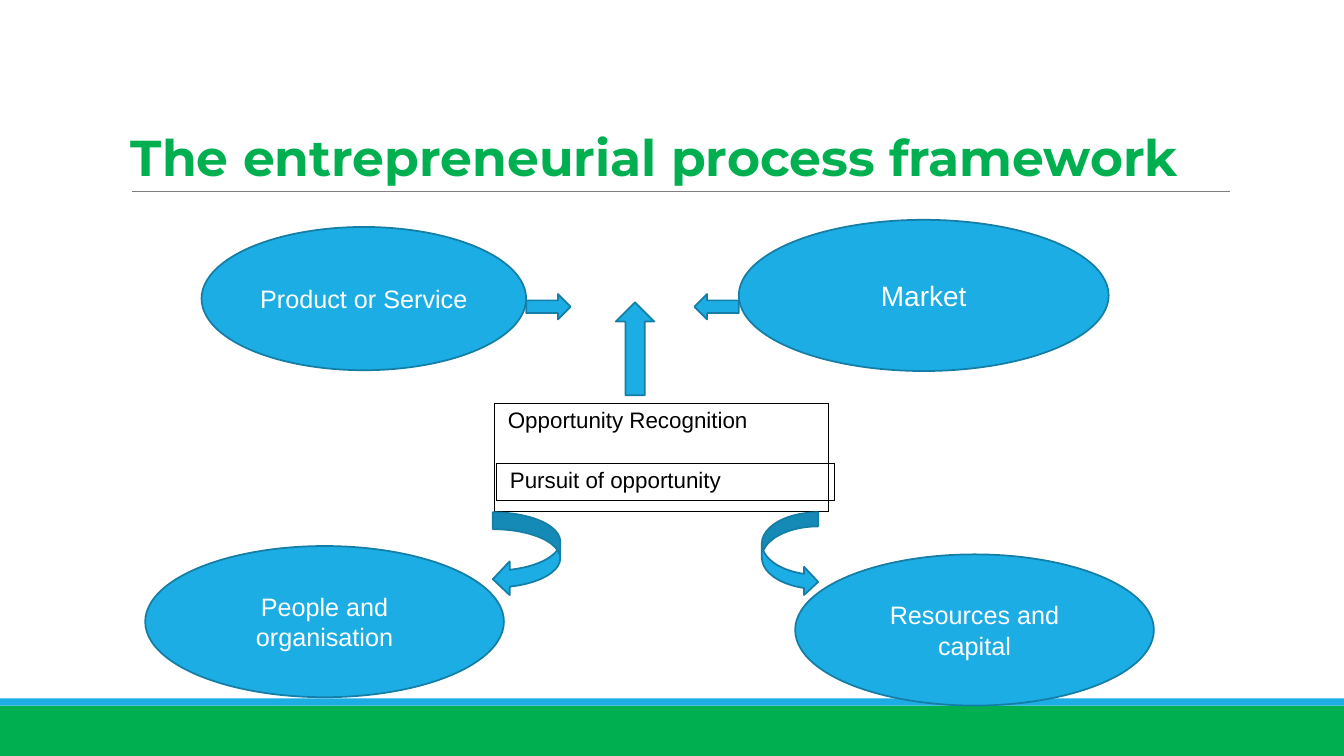
"""Builds the slide on the entrepreneurial process framework."""
from dataclasses import dataclass
from typing import Optional

from lxml import etree
from pptx import Presentation
from pptx.dml.color import RGBColor
from pptx.enum.shapes import MSO_CONNECTOR, MSO_SHAPE
from pptx.enum.text import MSO_ANCHOR, PP_ALIGN
from pptx.oxml.ns import qn
from pptx.slide import Slide
from pptx.text.text import TextFrame
from pptx.util import Cm, Pt

STRAIGHT = MSO_CONNECTOR.STRAIGHT
RECTANGLE, OVAL = MSO_SHAPE.RECTANGLE, MSO_SHAPE.OVAL
UP, LEFT, RIGHT = MSO_SHAPE.UP_ARROW, MSO_SHAPE.LEFT_ARROW, MSO_SHAPE.RIGHT_ARROW
CURVED_LEFT, CURVED_RIGHT = MSO_SHAPE.CURVED_LEFT_ARROW, MSO_SHAPE.CURVED_RIGHT_ARROW
MIDDLE, BOTTOM = MSO_ANCHOR.MIDDLE, MSO_ANCHOR.BOTTOM
ALIGN_LEFT, CENTER = PP_ALIGN.LEFT, PP_ALIGN.CENTER


@dataclass(frozen=True)
class Theme:
    """Colours, fonts and type sizes of the slide."""
    green: str = "00B050"
    blue: str = "1CADE4"
    outline: str = "147EA6"
    rule: str = "7F7F7F"
    black: str = "000000"
    white: str = "FFFFFF"
    heading_font: str = "Montserrat"
    body_font: str = "Arial"
    title_size: int = 36
    market_size: int = 20
    factor_size: int = 18
    stage_size: int = 16


@dataclass(frozen=True)
class Box:
    """Position and size in centimetres."""
    left: float
    top: float
    width: float
    height: float

    def lengths(self) -> tuple:
        """Returns the four values as lengths."""
        return Cm(self.left), Cm(self.top), Cm(self.width), Cm(self.height)


@dataclass(frozen=True)
class Figure:
    """A preset shape with an optional outline and label."""
    kind: int
    box: Box
    fill: str
    outline: Optional[str] = None
    label: str = ""
    size: int = 18


@dataclass(frozen=True)
class Stage:
    """A bordered one-cell table naming a stage."""
    label: str
    box: Box


THEME = Theme()

BANDS = [
    Figure(RECTANGLE, Box(0, 17.78, 33.87, 1.27), THEME.green),
    Figure(RECTANGLE, Box(0, 17.6, 33.87, 0.18), THEME.blue),
]
STAGES = [
    Stage("Opportunity Recognition", Box(12.47, 10.16, 8.41, 2.72)),
    Stage("Pursuit of opportunity", Box(12.52, 11.68, 8.51, 0.94)),
]
FACTORS = [
    Figure(OVAL, Box(18.62, 5.54, 9.32, 3.81), THEME.blue, THEME.outline,
           "Market", THEME.market_size),
    *(Figure(OVAL, box, THEME.blue, THEME.outline, label, THEME.factor_size)
      for label, box in [
          ("Product or Service", Box(5.08, 5.72, 8.18, 3.61)),
          ("People and organisation", Box(3.66, 13.76, 9.04, 3.81)),
          ("Resources and capital", Box(20.04, 13.97, 9.04, 3.81))]),
]
ARROWS = [
    Figure(kind, box, THEME.blue, THEME.outline) for kind, box in [
        (UP, Box(15.52, 7.62, 0.97, 2.34)),
        (RIGHT, Box(13.26, 7.41, 1.12, 0.64)),
        (LEFT, Box(17.5, 7.41, 1.12, 0.64)),
        (CURVED_LEFT, Box(12.42, 12.91, 1.7, 2.11)),
        (CURVED_RIGHT, Box(19.2, 12.91, 1.42, 2.11))]
]


def write(frame: TextFrame, text: str, colour: str, font_format: dict,
          paragraph_format: dict) -> None:
    """Fills a text frame with one formatted paragraph."""
    paragraph = frame.paragraphs[0]
    run = paragraph.add_run()
    run.text = text
    run.font.color.rgb = RGBColor.from_string(colour)
    for target, values in ((run.font, font_format), (paragraph, paragraph_format)):
        for name, value in values.items():
            setattr(target, name, value)


def draw_figure(slide: Slide, figure: Figure) -> None:
    """Draws a filled preset shape and its label."""
    shape = slide.shapes.add_shape(figure.kind, *figure.box.lengths())
    shape.shadow.inherit = False
    shape.fill.solid()
    shape.fill.fore_color.rgb = RGBColor.from_string(figure.fill)
    if figure.outline:
        shape.line.color.rgb = RGBColor.from_string(figure.outline)
        shape.line.width = Pt(1.25)
    else:
        shape.line.fill.background()
    if figure.label:
        shape.text_frame.word_wrap = True
        shape.text_frame.vertical_anchor = MIDDLE
        write(shape.text_frame, figure.label, THEME.white,
              {"name": THEME.body_font, "size": Pt(figure.size)},
              {"alignment": CENTER})


def draw_stage(slide: Slide, stage: Stage) -> None:
    """Draws a stage as a transparent table with black borders."""
    table = slide.shapes.add_table(1, 1, *stage.box.lengths()).table
    table.first_row = table.horz_banding = False
    cell = table.cell(0, 0)
    margins = {"margin_left": Cm(0.33), "margin_right": Cm(0.33),
               "margin_top": Cm(0.13), "margin_bottom": Cm(0.13)}
    for name, value in margins.items():
        setattr(cell, name, value)
    write(cell.text_frame, stage.label, THEME.black,
          {"name": THEME.body_font, "size": Pt(THEME.stage_size)},
          {"alignment": ALIGN_LEFT})
    properties = cell._tc.get_or_add_tcPr()
    for side in ("a:lnL", "a:lnR", "a:lnT", "a:lnB"):
        border = etree.SubElement(properties, qn(side), w=str(Pt(1)))
        fill = etree.SubElement(border, qn("a:solidFill"))
        etree.SubElement(fill, qn("a:srgbClr"), val=THEME.black)
    cell.fill.background()


def draw_heading(slide: Slide) -> None:
    """Draws the title and the rule beneath it."""
    rule = slide.shapes.add_connector(STRAIGHT, Cm(3.33), Cm(4.83), Cm(30.99), Cm(4.83))
    rule.line.color.rgb = RGBColor.from_string(THEME.rule)
    rule.line.width = Pt(0.75)
    etree.SubElement(rule._element.spPr, qn("a:effectLst"))
    title = slide.shapes.add_textbox(*Box(3.05, 0.79, 27.46, 4.04).lengths())
    title.text_frame.word_wrap = True
    title.text_frame.vertical_anchor = BOTTOM
    write(title.text_frame, "The entrepreneurial process framework", THEME.green,
          {"name": THEME.heading_font, "size": Pt(THEME.title_size), "bold": True},
          {"alignment": ALIGN_LEFT, "line_spacing": 0.85})


def main() -> None:
    """Builds and saves the presentation."""
    presentation = Presentation()
    presentation.slide_width, presentation.slide_height = Cm(33.87), Cm(19.05)
    slide = presentation.slides.add_slide(presentation.slide_layouts[6])
    for band in BANDS:
        draw_figure(slide, band)
    draw_heading(slide)
    for stage in STAGES:
        draw_stage(slide, stage)
    for figure in FACTORS + ARROWS:
        draw_figure(slide, figure)
    presentation.save("out.pptx")


if __name__ == "__main__":
    main()
